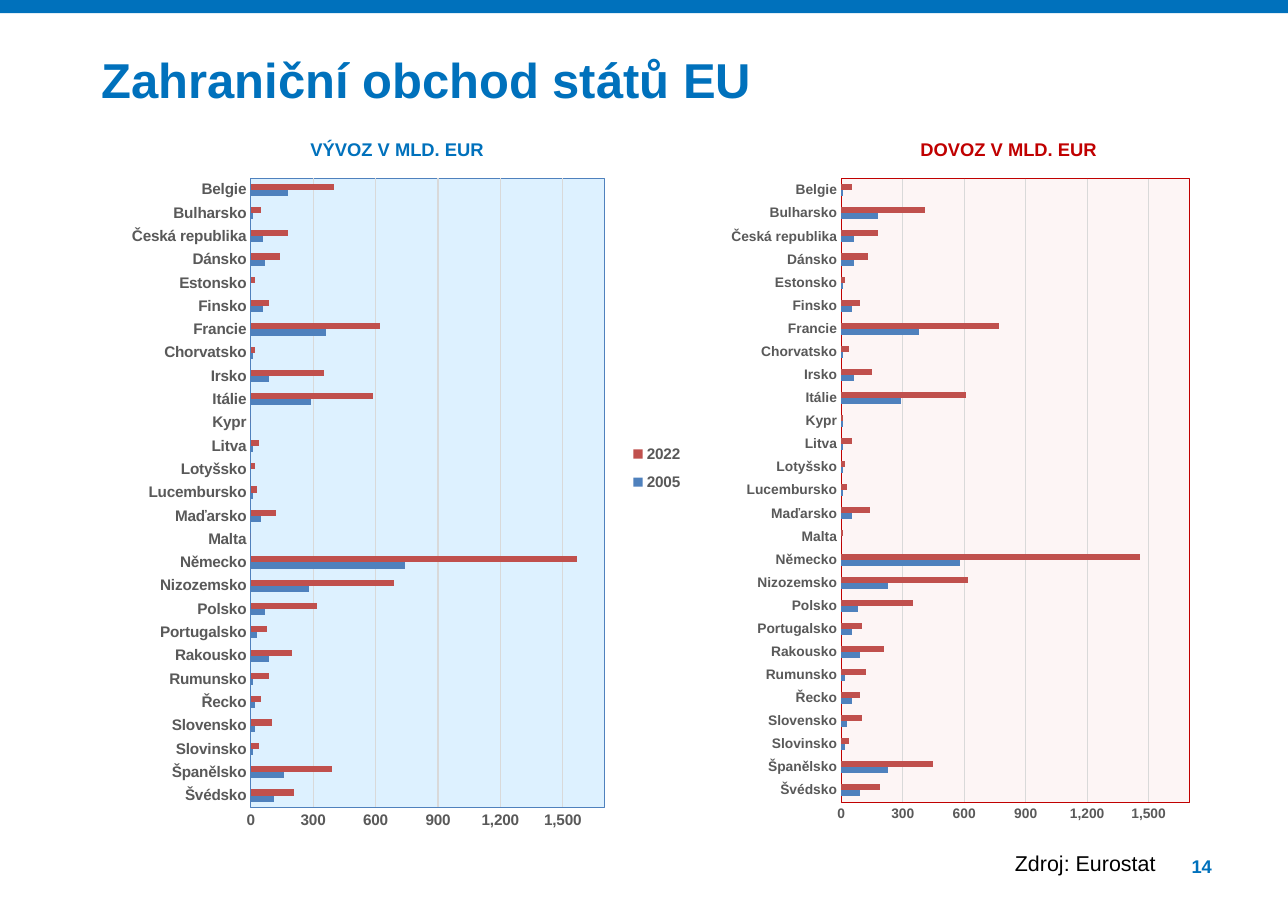
from lxml import etree
from pptx import Presentation
from pptx.chart.data import CategoryChartData
from pptx.dml.color import RGBColor
from pptx.enum import chart as charts, shapes, text
from pptx.oxml import parse_xml
from pptx.oxml.ns import nsdecls, qn
from pptx.util import Inches, Pt

BLUE = RGBColor(0x00, 0x71, 0xBC)
RED = RGBColor(0xC0, 0x00, 0x00)
BLACK = RGBColor(0x00, 0x00, 0x00)
LABEL_GREY = RGBColor(0x59, 0x59, 0x59)
GRID_GREY = RGBColor(0xD9, 0xD9, 0xD9)
BAR_BLUE = RGBColor(0x4F, 0x81, 0xBD)
BAR_RED = RGBColor(0xC0, 0x50, 0x4D)
PALE_BLUE = RGBColor(0xDD, 0xF1, 0xFF)
PALE_RED = RGBColor(0xFD, 0xF5, 0xF5)

# Bar charts count from the bottom up.
COUNTRIES = [
    "Švédsko", "Španělsko", "Slovinsko", "Slovensko", "Řecko", "Rumunsko",
    "Rakousko", "Portugalsko", "Polsko", "Nizozemsko", "Německo", "Malta",
    "Maďarsko", "Lucembursko", "Lotyšsko", "Litva", "Kypr", "Itálie", "Irsko",
    "Chorvatsko", "Francie", "Finsko", "Estonsko", "Dánsko",
    "Česká republika", "Bulharsko", "Belgie",
]
EXPORTS = {
    "2005": [110, 160, 10, 20, 20, 10, 90, 30, 70, 280, 740, 0, 50, 10, 0, 10, 0,
             290, 90, 10, 360, 60, 0, 70, 60, 10, 180],
    "2022": [210, 390, 40, 100, 50, 90, 200, 80, 320, 690, 1570, 0, 120, 30, 20,
             40, 0, 590, 350, 20, 620, 90, 20, 140, 180, 50, 400],
}
IMPORTS = {
    "2005": [90, 230, 20, 30, 50, 20, 90, 50, 80, 230, 580, 0, 50, 10, 10, 10, 10,
             290, 60, 10, 380, 50, 10, 60, 60, 180, 10],
    "2022": [190, 450, 40, 100, 90, 120, 210, 100, 350, 620, 1460, 10, 140, 30, 20,
             50, 10, 610, 150, 40, 770, 90, 20, 130, 180, 410, 50],
}


def set_font(font, size, color, bold=True):
    font.name = "Arial"
    font.size = Pt(size)
    font.bold = bold
    font.color.rgb = color


def write(box, words, size, color, bold=True, align=text.PP_ALIGN.LEFT, spacing=None):
    frame = box.text_frame
    frame.word_wrap = True
    frame.auto_size = text.MSO_AUTO_SIZE.NONE
    frame.vertical_anchor = text.MSO_ANCHOR.TOP
    frame.margin_left = frame.margin_right = 0
    frame.margin_top = frame.margin_bottom = 0
    para = frame.paragraphs[0]
    para.alignment = align
    para.line_spacing = spacing
    span = para.add_run()
    span.text = words
    set_font(span.font, size, color, bold)


def add_label(page, place, words, size, color, **style):
    box = page.shapes.add_textbox(*map(Inches, place))
    write(box, words, size, color, **style)


def add_top_band(page, width):
    band = page.shapes.add_shape(shapes.MSO_SHAPE.RECTANGLE, 0, 0, width, Inches(0.12))
    band.shadow.inherit = False
    band.fill.solid()
    band.fill.fore_color.rgb = BLUE
    band.line.fill.background()


def manual_layout(place, inner=False):
    """Layout element with place as fractions of the chart: x, y, w, h."""
    target = '<c:layoutTarget val="inner"/>' if inner else ""
    modes = '<c:xMode val="edge"/><c:yMode val="edge"/>'
    sizes = "".join(f'<c:{name} val="{value}"/>' for name, value in zip("xywh", place))
    return parse_xml(f'<c:layout {nsdecls("c")}><c:manualLayout>{target}{modes}{sizes}'
                     "</c:manualLayout></c:layout>")


def drop_layout(element):
    for layout in element.findall(qn("c:layout")):
        element.remove(layout)


def style_plot_area(chart, place, fill, border):
    area = chart.plots[0]._element.getparent()
    drop_layout(area)
    area.insert(0, manual_layout(place, inner=True))
    area.append(parse_xml(
        f'<c:spPr {nsdecls("c", "a")}>'
        f'<a:solidFill><a:srgbClr val="{fill}"/></a:solidFill>'
        f'<a:ln w="{Pt(0.5)}"><a:solidFill><a:srgbClr val="{border}"/></a:solidFill></a:ln>'
        "</c:spPr>"))


def style_axes(chart, size, line_color):
    for axis in (chart.category_axis, chart.value_axis):
        axis.major_tick_mark = axis.minor_tick_mark = charts.XL_TICK_MARK.NONE
        set_font(axis.tick_labels.font, size, LABEL_GREY)
    countries, amounts = chart.category_axis, chart.value_axis
    countries.format.line.color.rgb = line_color
    countries.format.line.width = Pt(0.5)
    amounts.format.line.fill.background()
    amounts.minimum_scale, amounts.maximum_scale, amounts.major_unit = 0, 1700, 300
    amounts.tick_labels.number_format = "#,##0"
    amounts.tick_labels.number_format_is_linked = False
    amounts.has_major_gridlines = True
    amounts.major_gridlines.format.line.color.rgb = GRID_GREY
    amounts.major_gridlines.format.line.width = Pt(0.75)


def add_legend(chart, place):
    chart.has_legend = True
    legend = chart.legend
    legend.position = charts.XL_LEGEND_POSITION.RIGHT
    legend.include_in_layout = False
    set_font(legend.font, 10, LABEL_GREY)
    drop_layout(legend._element)
    legend._element.find(qn("c:legendPos")).addnext(manual_layout(place))


def add_trade_chart(page, place, amounts, plot_place, fill, border, size):
    data = CategoryChartData(number_format="#,##0")
    data.categories = COUNTRIES
    for year, values in amounts.items():
        data.add_series(year, values)
    chart = page.shapes.add_chart(
        charts.XL_CHART_TYPE.BAR_CLUSTERED, *map(Inches, place), data).chart
    chart.has_title = False
    chart.has_legend = False
    set_font(chart.font, 10, BLACK)
    plot = chart.plots[0]
    plot.vary_by_categories = False
    plot.gap_width = 182
    plot.overlap = 0
    for series, color in zip(plot.series, (BAR_BLUE, BAR_RED)):
        series.format.fill.solid()
        series.format.fill.fore_color.rgb = color
    style_axes(chart, size, border)
    style_plot_area(chart, plot_place, fill, border)
    return chart


def main():
    deck = Presentation()
    deck.slide_width, deck.slide_height = Inches(11.69), Inches(8.27)
    page = deck.slides.add_slide(deck.slide_layouts[5])
    add_top_band(page, deck.slide_width)

    title = page.shapes.title
    title.left, title.top, title.width, title.height = map(Inches, (0.92, 0.51, 9.26, 0.71))
    write(title, "Zahraniční obchod států EU", 32, BLUE, spacing=0.9)

    center, right = text.PP_ALIGN.CENTER, text.PP_ALIGN.RIGHT
    add_label(page, (2.62, 1.25, 1.97, 0.28), "VÝVOZ V MLD. EUR", 12, BLUE, align=center)
    add_label(page, (8.17, 1.25, 1.97, 0.28), "DOVOZ V MLD. EUR", 12, RED, align=center)
    add_label(page, (9, 7.72, 1.49, 0.39), "Zdroj: Eurostat", 14, BLACK,
              bold=False, align=right)
    add_label(page, (10.22, 7.76, 0.78, 0.21), "14", 12, BLUE, align=right)

    exports = add_trade_chart(page, (1.04, 1.5, 5.35, 6.11), EXPORTS,
                              (0.231, 0.019, 0.6, 0.935), PALE_BLUE, BAR_BLUE, 10)
    add_legend(exports, (0.86, 0.4, 0.12, 0.1))
    add_trade_chart(page, (6.38, 1.47, 4.67, 6.13), IMPORTS,
                    (0.269, 0.025, 0.677, 0.923), PALE_RED, RED, 9)
    deck.save("out.pptx")


if __name__ == "__main__":
    main()
